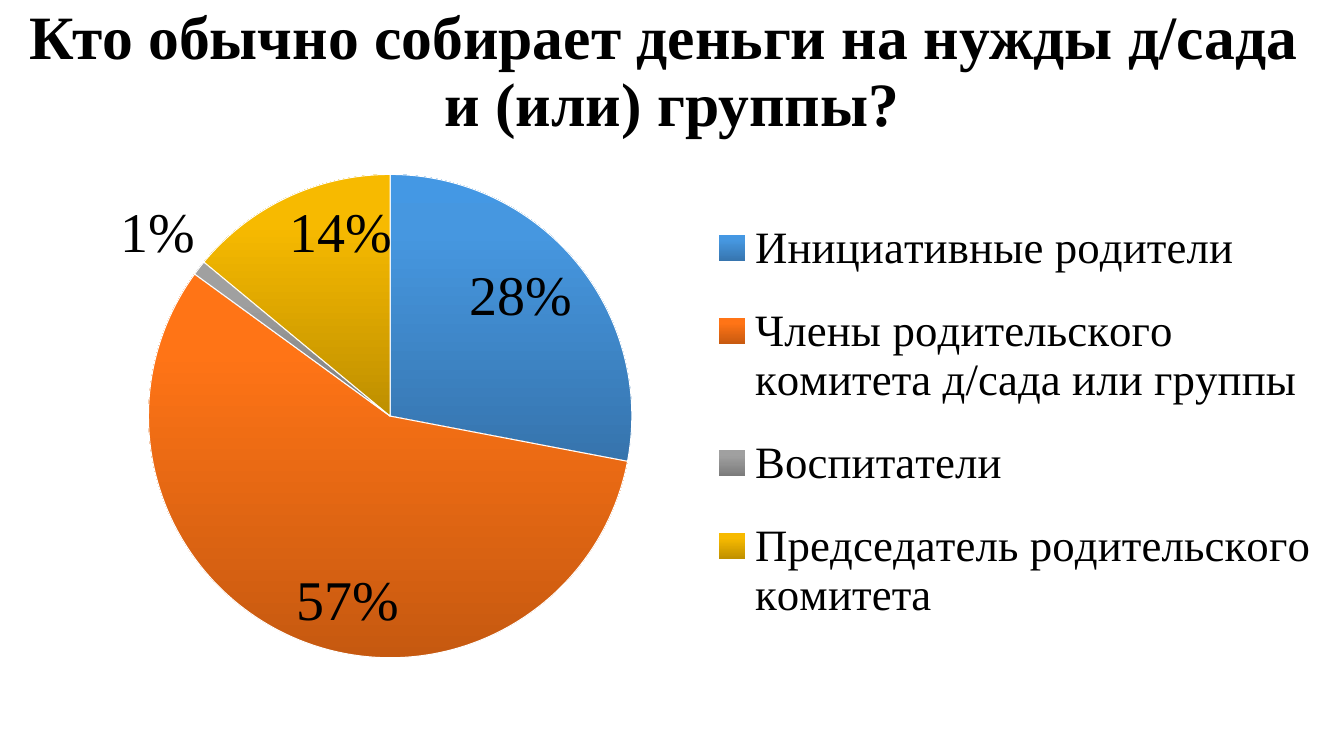
import copy

import lxml.etree
import pptx
import pptx.chart.data
import pptx.dml.color
import pptx.enum.chart
import pptx.enum.text
import pptx.oxml.ns
import pptx.util

FONT = "Times New Roman"
TITLE = "Кто обычно собирает деньги на нужды д/сада \vи (или) группы?"
STOPS = (0, 0.8, 1)
# Answer, percent, gradient colours from bottom to top
ANSWERS = [
    ("Инициативные родители", 28, ("3674AD", "4697E0", "4498E4")),
    ("Члены родительского комитета д/сада или группы", 57, ("C65910", "FF7416", "FF7517")),
    ("Воспитатели", 1, ("7B7B7B", "A0A0A0", "A1A1A1")),
    ("Председатель родительского  комитета", 14, ("BE8F00", "F7BA00", "F8BB00")),
]
SMALL_SLICE = 5


def colour(value):
    return pptx.dml.color.RGBColor.from_string(value)


def set_font(font, size, bold=False):
    font.name = FONT
    font.size = pptx.util.Pt(size)
    font.bold = bold
    font.color.rgb = colour("000000")


def place(box):
    return [pptx.util.Pt(length) for length in box]


def manual_layout(fractions, inner=False):
    """Return a chart layout for left, top, width and height fractions."""
    qn = pptx.oxml.ns.qn
    layout = lxml.etree.Element(qn("c:layout"))
    manual = lxml.etree.SubElement(layout, qn("c:manualLayout"))
    settings = [("layoutTarget", "inner")] if inner else []
    settings += [("xMode", "edge"), ("yMode", "edge")]
    settings += zip("xywh", fractions)
    for name, value in settings:
        lxml.etree.SubElement(manual, qn("c:" + name)).set("val", str(value))
    return layout


def add_title(page, box):
    title = page.shapes.title
    title.left, title.top, title.width, title.height = place(box)
    frame = title.text_frame
    frame.text = TITLE
    frame.word_wrap = True
    frame.auto_size = pptx.enum.text.MSO_AUTO_SIZE.NONE
    frame.vertical_anchor = pptx.enum.text.MSO_ANCHOR.MIDDLE
    para = frame.paragraphs[0]
    para.alignment = pptx.enum.text.PP_ALIGN.CENTER
    para.line_spacing = 0.9
    set_font(para.font, 44, bold=True)


def fill_slices(chart, series):
    fills = []
    for index in range(len(ANSWERS)):
        slice_format = series.points[index].format
        slice_format.fill.gradient()
        slice_format.fill.gradient_angle = 90
        slice_format.line.color.rgb = colour("FFFFFF")
        slice_format.line.width = pptx.util.Pt(0.75)
        fills.append(slice_format.fill)
    # A new gradient has two stops; each slice needs a third
    for stop_list in chart.element.iter(pptx.oxml.ns.qn("a:gsLst")):
        stop_list.append(copy.deepcopy(stop_list[0]))
    for fill, (_, _, shades) in zip(fills, ANSWERS):
        for stop, position, shade in zip(fill.gradient_stops, STOPS, shades):
            stop.position = position
            stop.color.rgb = colour(shade)


def label_slices(chart, series):
    qn = pptx.oxml.ns.qn
    positions = pptx.enum.chart.XL_LABEL_POSITION
    labels = series.data_labels
    labels.show_percentage = True
    labels.show_value = False
    labels.number_format = "0%"
    labels.number_format_is_linked = False
    labels.position = positions.INSIDE_END
    set_font(labels.font, 40)
    # Small slices carry their label outside
    for index, (_, percent, _) in enumerate(ANSWERS):
        if percent < SMALL_SLICE:
            label = series.points[index].data_label
            set_font(label.font, 40)
            label.position = positions.OUTSIDE_END
    for label in chart.element.iter(qn("c:dLbl")):
        label.find(qn("c:showVal")).set("val", "0")
        label.find(qn("c:showPercent")).set("val", "1")


def add_answers_chart(page, box):
    qn = pptx.oxml.ns.qn
    data = pptx.chart.data.CategoryChartData()
    data.categories = [answer for answer, _, _ in ANSWERS]
    data.add_series("Series 1", [percent for _, percent, _ in ANSWERS])
    chart = page.shapes.add_chart(
        pptx.enum.chart.XL_CHART_TYPE.PIE, *place(box), data).chart
    chart.has_title = False
    set_font(chart.font, 10)

    # Slices and their labels
    plot = chart.plots[0]
    plot.vary_by_categories = True
    series = plot.series[0]
    fill_slices(chart, series)
    label_slices(chart, series)

    # Legend
    chart.has_legend = True
    legend = chart.legend
    legend.position = pptx.enum.chart.XL_LEGEND_POSITION.RIGHT
    legend.include_in_layout = False
    set_font(legend.font, 32)

    # Places of the pie and the legend
    plot_area = next(chart.element.iter(qn("c:plotArea")))
    legend_position = next(chart.element.iter(qn("c:legendPos")))
    for parent in (plot_area, legend_position.getparent()):
        for layout in parent.findall(qn("c:layout")):
            parent.remove(layout)
    plot_area.insert(0, manual_layout((0.058, 0.084, 0.381, 0.803), inner=True))
    legend_position.addnext(manual_layout((0.5, 0.11, 0.49, 0.77)))


def main():
    deck = pptx.Presentation()
    deck.slide_width = pptx.util.Pt(960)
    deck.slide_height = pptx.util.Pt(540)
    page = deck.slides.add_slide(deck.slide_layouts[5])
    add_title(page, (0, 0, 960, 104.4))
    add_answers_chart(page, (53.3, 88.5, 907, 430))
    deck.save("out.pptx")


if __name__ == "__main__":
    main()
